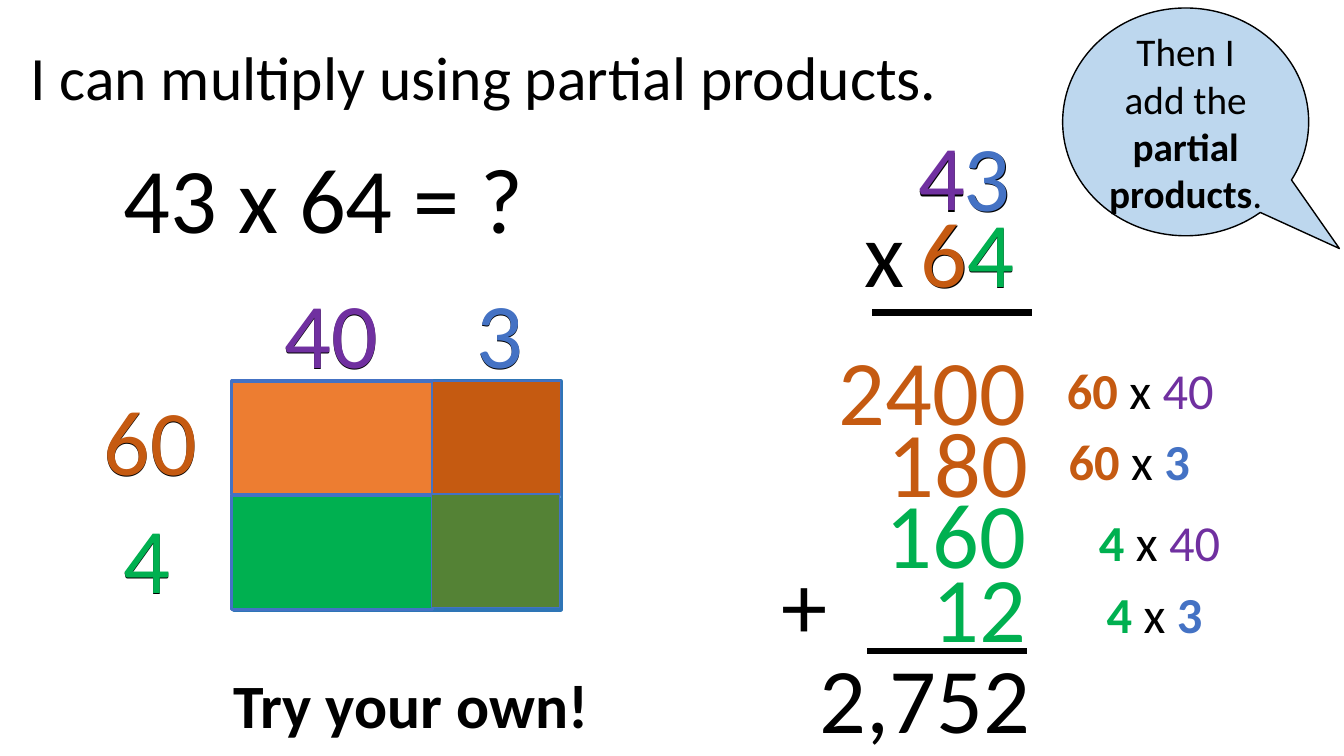
import pptx
import pptx.dml.color
import pptx.enum.shapes
import pptx.enum.text
import pptx.oxml
import pptx.util
from pptx.util import Inches

RGBColor = pptx.dml.color.RGBColor
MSO_SHAPE = pptx.enum.shapes.MSO_SHAPE
PP_ALIGN = pptx.enum.text.PP_ALIGN
MSO_ANCHOR = pptx.enum.text.MSO_ANCHOR

BLACK = RGBColor(0x00, 0x00, 0x00)
PURPLE = RGBColor(0x70, 0x30, 0xA0)
BLUE = RGBColor(0x44, 0x72, 0xC4)
RUST = RGBColor(0xC5, 0x5A, 0x11)
ORANGE = RGBColor(0xED, 0x7D, 0x31)
GREEN = RGBColor(0x00, 0xB0, 0x50)
OLIVE = RGBColor(0x54, 0x82, 0x35)
PALE_BLUE = RGBColor(0xBD, 0xD7, 0xEE)
FRAME_BLUE = RGBColor(0x2E, 0x75, 0xB6)
DIVIDER_BLUE = RGBColor(0x5B, 0x9B, 0xD5)

FONT = "Calibri"
DIGIT_SIZE = 66

# Digits drawn in black with a coloured digit on top: text, left, top, width, colour
AREA_LABELS = [
    ("40", 2.5, 2.69, 1.57, PURPLE),
    ("3", 4.43, 2.69, 1.05, BLUE),
    ("60", 0.8, 3.75, 1.38, RUST),
    ("4", 0.77, 4.92, 1.38, GREEN),
]
FACTORS = [("43", 7.43, 1.14, 4.28), ("64", 8.96, 1.9, 1.28)]
FACTOR_DIGITS = [
    ("4", 8.87, 1.12, 0.95, PURPLE),
    ("3", 9.31, 1.13, 0.95, BLUE),
    ("6", 8.72, 1.89, 1.28, RUST),
    ("4", 9.19, 1.89, 1.28, GREEN),
]
WORKING = [
    ("x", 8.3, 1.89, 0.95, BLACK),
    ("2400", 8.09, 3.26, 2.32, RUST),
    ("180", 8.34, 3.97, 2.32, RUST),
    ("160", 8.32, 4.67, 2.32, GREEN),
    ("12", 8.73, 5.41, 1.97, GREEN),
    ("+", 7.5, 5.38, 0.95, BLACK),
    ("2,752", 7.87, 6.31, 2.61, BLACK),
]
# Left, top, first factor, its colour, second factor, its colour, second is bold
PRODUCTS = [
    (9.82, 3.51, "60", RUST, "40", PURPLE, False),
    (9.71, 4.22, "60", RUST, "3", BLUE, True),
    (10.01, 5.02, "4", GREEN, "40", PURPLE, False),
    (9.96, 5.74, "4", GREEN, "3", BLUE, True),
]
# Left, top, width, fill, line width
AREA_CELLS = [
    (2.3, 3.78, 1.99, ORANGE, 2.25),
    (4.29, 3.78, 1.27, RUST, 1),
    (2.3, 4.92, 1.99, GREEN, 2.25),
    (4.28, 4.9, 1.27, OLIVE, 1),
]


def write_runs(tf, runs, size, align=PP_ALIGN.CENTER):
    """Fill the first paragraph with (text, colour, bold) runs."""
    p = tf.paragraphs[0]
    p.alignment = align
    p.font.name = FONT
    p.font.size = pptx.util.Pt(size)
    for text, colour, bold in runs:
        r = p.add_run()
        r.text = text
        r.font.color.rgb = colour
        r.font.bold = bold


def add_text(s, left, top, width, height, runs, size):
    box = s.shapes.add_textbox(Inches(left), Inches(top), Inches(width), Inches(height))
    box.text_frame.word_wrap = True
    write_runs(box.text_frame, runs, size)


def add_digits(s, text, left, top, width, colour=BLACK):
    add_text(s, left, top, width, 1.21, [(text, colour, False)], DIGIT_SIZE)


def add_box(s, kind, left, top, width, height, fill, line, weight):
    sp = s.shapes.add_shape(kind, Inches(left), Inches(top), Inches(width), Inches(height))
    sp.shadow.inherit = False
    if fill is None:
        sp.fill.background()
    else:
        sp.fill.solid()
        sp.fill.fore_color.rgb = fill
    sp.line.color.rgb = line
    sp.line.width = pptx.util.Pt(weight)
    return sp


def add_line(s, left, right, y, colour, weight):
    line = s.shapes.add_connector(
        pptx.enum.shapes.MSO_CONNECTOR.STRAIGHT,
        Inches(left), Inches(y), Inches(right), Inches(y))
    line.line.color.rgb = colour
    line.line.width = pptx.util.Pt(weight)
    line._element.spPr.append(pptx.oxml.xmlchemy.OxmlElement("a:effectLst"))
    return line


def add_title(s):
    title = s.shapes.title
    title.left, title.top = Inches(0.2), Inches(0.07)
    title.width, title.height = Inches(11.5), Inches(1.45)
    tf = title.text_frame
    tf.auto_size = pptx.enum.text.MSO_AUTO_SIZE.NONE
    tf.vertical_anchor = MSO_ANCHOR.MIDDLE
    tf.paragraphs[0].line_spacing = 0.9
    write_runs(tf, [("I can multiply using partial products.", BLACK, False)],
               44, PP_ALIGN.LEFT)


def add_callout(s):
    sp = add_box(s, MSO_SHAPE.OVAL_CALLOUT, 10.54, 0.08, 2.44, 2.26, PALE_BLUE, BLACK, 1)
    sp.adjustments[0], sp.adjustments[1] = 0.625, 0.556
    sp.text_frame.word_wrap = True
    sp.text_frame.vertical_anchor = MSO_ANCHOR.MIDDLE
    write_runs(sp.text_frame, [("Then I add the ", BLACK, False),
                               ("partial products", BLACK, True),
                               (".", BLACK, False)], 28)


def add_area_model(s):
    left, right = [
        add_box(s, MSO_SHAPE.RECTANGLE, x, 3.78, width, 2.27, None, FRAME_BLUE, 3)
        for x, width in ((2.32, 1.96), (4.29, 1.27))]
    divider = add_line(s, 2.32, 5.56, 4.92, DIVIDER_BLUE, 3)
    divider.begin_connect(left, 1)
    divider.end_connect(right, 3)
    for x, y, width, fill, weight in AREA_CELLS:
        add_box(s, MSO_SHAPE.RECTANGLE, x, y, width, 1.13, fill, BLUE, weight)
    for text, x, y, width, colour in AREA_LABELS:
        add_digits(s, text, x, y + 0.01, width)
        add_digits(s, text, x, y, width, colour)


def add_column_working(s):
    for factor in FACTORS:
        add_digits(s, *factor)
    for digits in FACTOR_DIGITS + WORKING:
        add_digits(s, *digits)
    add_line(s, 8.65, 10.24, 3.1, BLACK, 4.5)
    add_line(s, 8.6, 10.19, 6.46, BLACK, 4.5)
    for x, y, first, first_colour, second, second_colour, bold in PRODUCTS:
        add_text(s, x, y, 2.98, 0.71, [(first, first_colour, True),
                                       (" x ", BLACK, False),
                                       (second, second_colour, bold)], 36)


def main():
    prs = pptx.Presentation()
    prs.slide_width, prs.slide_height = Inches(13.33), Inches(7.5)
    s = prs.slides.add_slide(prs.slide_layouts[5])
    add_title(s)
    add_digits(s, "43 x 64 = ?", 1.07, 1.35, 4.28)
    add_text(s, 1.97, 6.57, 4.21, 0.84, [("Try your own!", BLACK, True)], 44)
    add_callout(s)
    add_area_model(s)
    add_column_working(s)
    prs.save("out.pptx")


if __name__ == "__main__":
    main()
